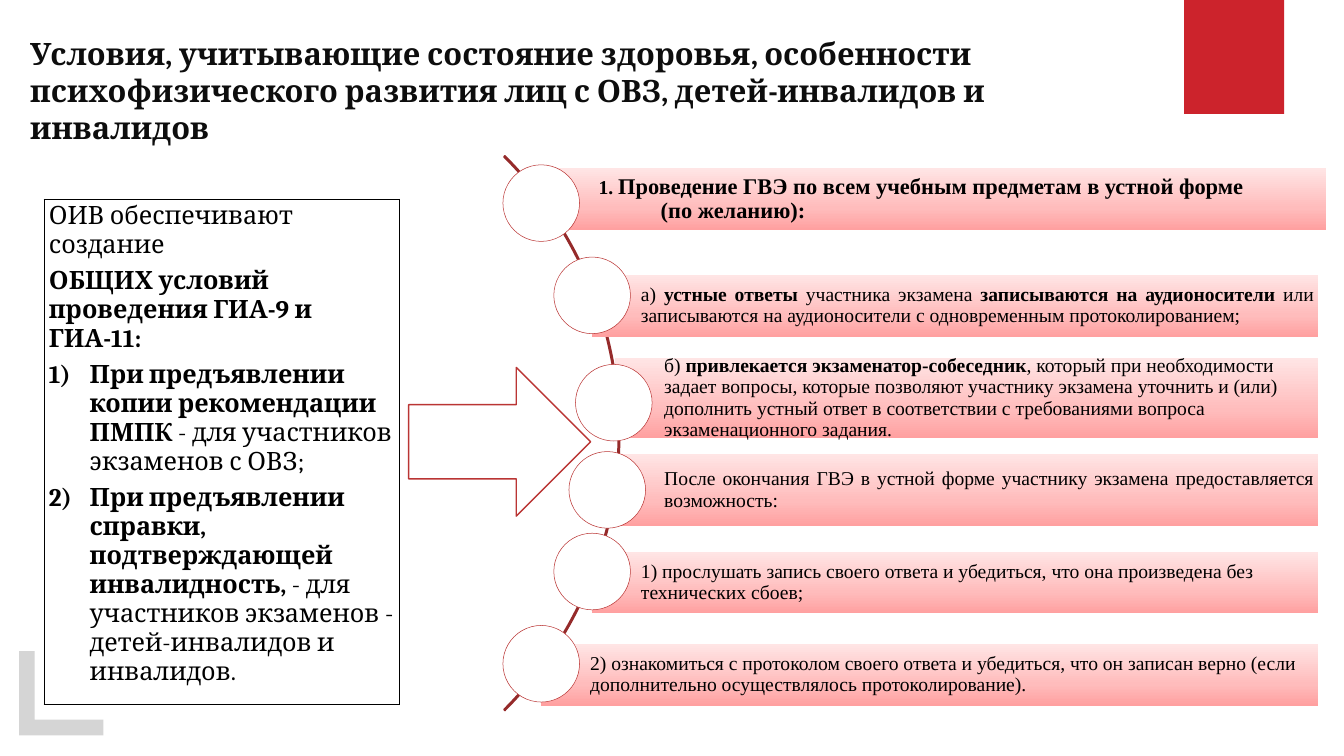
"""Build the slide on exam conditions for participants with special needs."""
from copy import deepcopy
from dataclasses import dataclass

from lxml import etree
from pptx import Presentation
from pptx import util as u
from pptx.dml.color import RGBColor
from pptx.enum import shapes, text
from pptx.oxml import ns

KIND = shapes.MSO_SHAPE
SIDE = text.PP_ALIGN
ROWS = 45


@dataclass(frozen=True)
class Theme:
    """Colours, fonts and type sizes."""
    ink: str = "000000"
    head: str = "0D0D0D"
    paper: str = "FFFFFF"
    grey: str = "D5D5D5"
    red: str = "CC232C"
    edge: str = "BA3534"
    arc: str = "952A2A"
    fade: tuple = ((0, "FFA0A0"), (0.35, "FFBCBC"), (1, "FFE5E5"))
    serif: str = "Cambria"
    roman: str = "Times New Roman"
    title: int = 44
    list: int = 36
    lead: int = 32
    body: int = 28


class Deck:
    """Hold the theme and the current slide, and draw on its grid."""

    def __init__(self, theme):
        """Open a slide with a title."""
        self.theme = theme
        self.show = Presentation()
        self.show.slide_width = u.Inches(26.67)
        self.show.slide_height = u.Inches(15)
        self.unit = self.show.slide_height / ROWS
        self.slide = self.show.slides.add_slide(self.show.slide_layouts[5])

    def span(self, *cells):
        """Turn grid units into lengths."""
        return [u.Emu(round(c * self.unit)) for c in cells]

    def words(self, para, runs, font, size, color=None):
        """Add (text, bold, size) runs to a paragraph."""
        for part, bold, *own in runs:
            run = para.add_run()
            run.text = part
            run.font.name = font
            run.font.size = u.Pt(own[0] if own else size)
            run.font.bold = bold
            run.font.color.rgb = RGBColor.from_string(color or self.theme.ink)

    def title(self, line, *area):
        """Place and fill the title."""
        box = self.slide.shapes.title
        box.left, box.top, box.width, box.height = self.span(*area)
        frame = box.text_frame
        frame.word_wrap = True
        frame.auto_size = text.MSO_AUTO_SIZE.NONE
        frame.vertical_anchor = text.MSO_ANCHOR.TOP
        frame.margin_left = frame.margin_right = u.Inches(0.05)
        frame.margin_top = frame.margin_bottom = u.Inches(0.05)
        para = frame.paragraphs[0]
        para.alignment = SIDE.LEFT
        look = self.theme
        self.words(para, [(line, True)], look.serif, look.title, look.head)

    def paint(self, item, fill=None, line=None, width=1):
        """Set fill and line, and drop the shadow."""
        item.shadow.inherit = False
        if fill:
            item.fill.solid()
            item.fill.fore_color.rgb = RGBColor.from_string(fill)
        else:
            item.fill.background()
        if line:
            item.line.color.rgb = RGBColor.from_string(line)
            item.line.width = u.Pt(width)
        else:
            item.line.fill.background()
        return item

    def shape(self, kind, area, **style):
        """Add a preset shape."""
        item = self.slide.shapes.add_shape(kind, *self.span(*area))
        return self.paint(item, **style)

    def corner(self, x, y, size, thick):
        """Add an L-shaped corner mark."""
        end, foot = x + size, y + size
        dots = [(x, y), (x + thick, y), (x + thick, foot - thick),
                (end, foot - thick), (end, foot), (x, foot)]
        first, *rest = [self.span(*dot) for dot in dots]
        build = self.slide.shapes.build_freeform(*first)
        build.add_line_segments(rest, close=True)
        self.paint(build.convert_to_shape(), self.theme.grey)

    def panel(self, items, *area):
        """Add a one-cell table of plain and numbered paragraphs."""
        look = self.theme
        grid = self.slide.shapes.add_table(1, 1, *self.span(*area)).table
        grid.first_row = grid.horz_banding = False
        cell = grid.cell(0, 0)
        props = cell._tc.get_or_add_tcPr()
        for side in ("lnL", "lnR", "lnT", "lnB"):
            line = etree.SubElement(props, ns.qn(f"a:{side}"), w=str(u.Pt(1)))
            solid = etree.SubElement(line, ns.qn("a:solidFill"))
            etree.SubElement(solid, ns.qn("a:srgbClr"), val=look.ink)
        cell.fill.solid()
        cell.fill.fore_color.rgb = RGBColor.from_string(look.paper)
        frame = cell.text_frame
        for i, (count, runs) in enumerate(items):
            para = frame.add_paragraph() if i else frame.paragraphs[0]
            para.space_after = u.Pt(10)
            if count:
                mark = self.hang(para, 0.81)
                etree.SubElement(mark, ns.qn("a:buFont"), typeface="+mj-lt")
                etree.SubElement(mark, ns.qn("a:buAutoNum"), type="arabicParenR")
            self.words(para, runs, look.serif, look.list)

    def hang(self, para, inches):
        """Give a paragraph a hanging indent."""
        mark = para._p.get_or_add_pPr()
        mark.set("marL", str(u.Inches(inches)))
        mark.set("indent", str(-u.Inches(inches)))
        return mark

    def bar(self, area, lines, align, indent=0):
        """Add a shaded bar with text; later lines are indented."""
        look = self.theme
        item = self.shape(KIND.RECTANGLE, area)
        item.fill.gradient()
        item.fill.gradient_angle = 90
        stops = item._element.spPr.find(".//" + ns.qn("a:gsLst"))
        stops.append(deepcopy(stops[-1]))
        for stop, (place, color) in zip(item.fill.gradient_stops, look.fade):
            stop.position = place
            stop.color.rgb = RGBColor.from_string(color)
        frame = item.text_frame
        frame.word_wrap = True
        frame.vertical_anchor = text.MSO_ANCHOR.MIDDLE
        frame.margin_left = u.Inches(0.97)
        frame.margin_right = frame.margin_top = frame.margin_bottom = u.Inches(0.08)
        para = frame.paragraphs[0]
        para.alignment = align
        para.line_spacing = 0.9
        if indent:
            self.hang(para, indent)
        for i, runs in enumerate(lines):
            if i:
                para.add_line_break()
            self.words(para, runs, look.roman, look.body)


look = Theme()
deck = Deck(look)
deck.corner(1.14, 38.76, 5.01, 0.93)
deck.shape(KIND.RECTANGLE, (70.5, -0.15, 5.94, 6.93), fill=look.red)
deck.title("Условия, учитывающие состояние здоровья, особенности психофизического "
           "развития лиц с ОВЗ, детей-инвалидов и инвалидов", 1.65, 1.92, 67.71, 7.08)
deck.panel([
    (False, [("ОИВ обеспечивают создание", False)]),
    (False, [("ОБЩИХ условий проведения ГИА-9 и ГИА-11:", True)]),
    (True, [("При предъявлении копии рекомендации ПМПК ", True),
            ("- для участников экзаменов с ОВЗ;", False)]),
    (True, [("При предъявлении справки, подтверждающей инвалидность, ", True),
            ("- для участников экзаменов - детей-инвалидов и инвалидов.", False)]),
], 2.61, 11.85, 21.15, 30.09)
deck.shape(KIND.RIGHT_ARROW, (24.33, 21.87, 10.83, 8.85),
           fill=look.paper, line=look.edge, width=2)
arc = deck.shape(KIND.BLOCK_ARC, (-9.81, 2.43, 46.71, 46.71), line=look.arc, width=2)
for i, value in enumerate((189, 27, 0.002)):
    arc.adjustments[i] = value

EDGE, DISC = 78.45, 4.56
steps = [
    (32.73, 10.02, 3.66, 78.96, 29.94, 9.81, SIDE.LEFT, 1.23, [
        [("1. ", True),
         ("Проведение ГВЭ по всем учебным предметам в устной форме", True, look.lead)],
        [("(по желанию):", True, look.lead)]]),
    (35.25, 16.38, 3.66, EDGE, 32.97, 15.3, SIDE.JUSTIFY, 0, [
        [("а) ", False), ("устные ответы ", True), ("участника экзамена ", False),
         ("записываются на аудионосители ", True),
         ("или записываются на аудионосители с одновременным протоколированием;", False)]]),
    (36.63, 21.3, 4.8, EDGE, 34.26, 21.69, SIDE.LEFT, 0, [
        [("б) ", False), ("привлекается экзаменатор-собеседник", True),
         (", который при необходимости задает вопросы, которые позволяют участнику "
          "экзамена уточнить и (или) дополнить устный ответ в соответствии с "
          "требованиями вопроса экзаменационного задания.", False)]]),
    (36.63, 27.03, 4.29, EDGE, 33.87, 26.88, SIDE.JUSTIFY, 0, [
        [("После окончания ГВЭ в устной форме участнику экзамена предоставляется "
          "возможность:", False)]]),
    (35.25, 32.85, 3.66, EDGE, 32.97, 31.74, SIDE.LEFT, 0, [
        [("1) прослушать запись своего ответа и убедиться, что она произведена без "
          "технических сбоев;", False)]]),
    (32.22, 38.34, 3.66, EDGE, 29.94, 37.23, SIDE.LEFT, 0, [
        [("2) ознакомиться с протоколом своего ответа и убедиться, что он записан верно "
          "(если дополнительно осуществлялось протоколирование).", False)]]),
]
for x, y, high, end, left, top, align, indent, lines in steps:
    deck.bar((x, y, end - x, high), lines, align, indent)
    deck.shape(KIND.OVAL, (left, top, DISC, DISC),
               fill=look.paper, line=look.edge, width=0.75)
deck.show.save("out.pptx")
